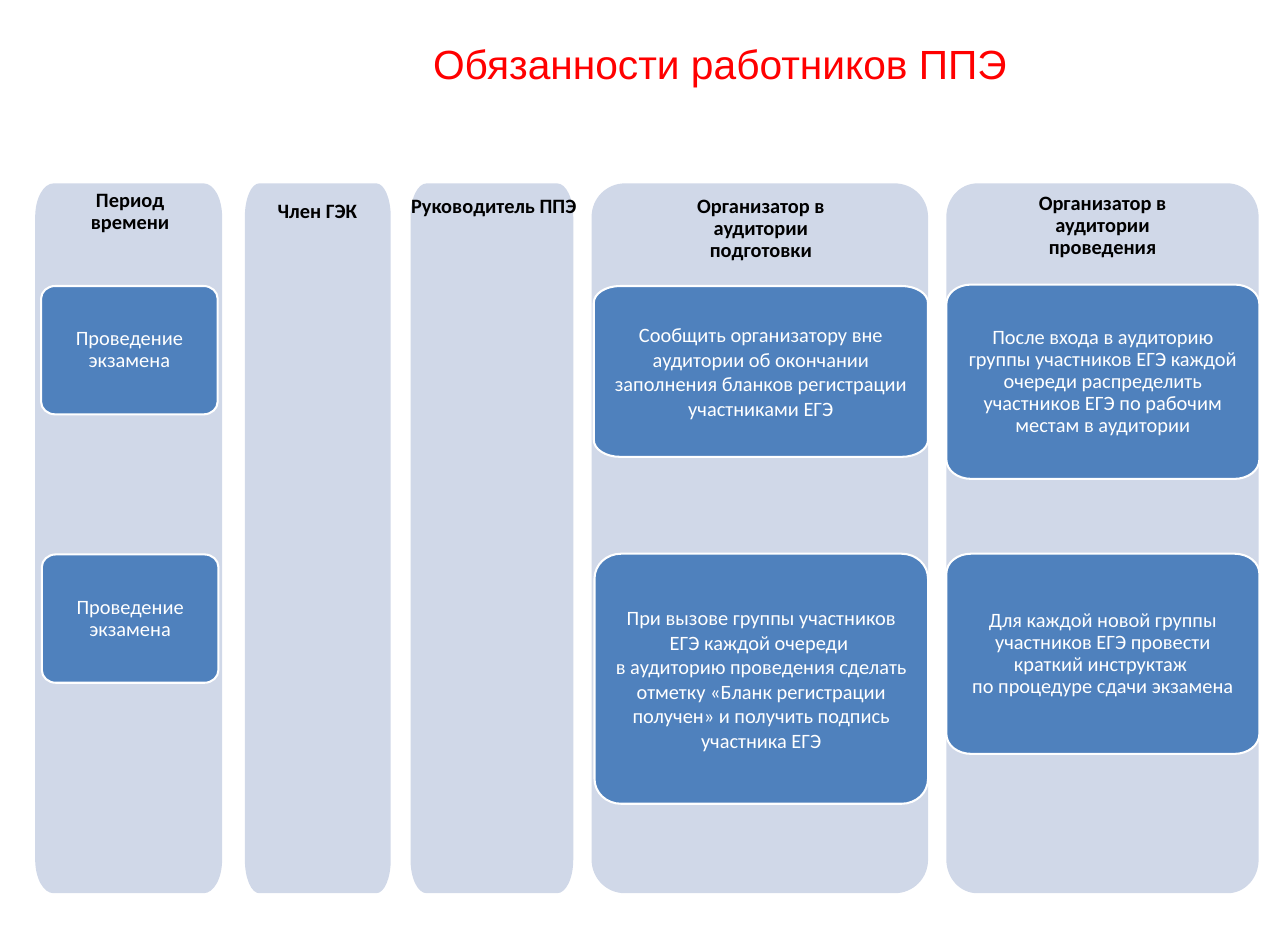
"""Build the slide on the duties of exam station staff."""
from dataclasses import dataclass

from lxml.etree import SubElement
from pptx import Presentation
from pptx.dml.color import RGBColor
from pptx.enum.text import MSO_ANCHOR, MSO_AUTO_SIZE, PP_ALIGN
from pptx.oxml.ns import qn
from pptx.util import Inches, Pt


@dataclass(frozen=True)
class Theme:
    column: str = "D0D8E8"
    card: str = "4F81BD"
    light: str = "FFFFFF"
    dark: str = "000000"
    accent: str = "FF0000"
    heading_font: str = "Arial"
    body_font: str = "Calibri"
    heading_size: int = 40
    body_size: int = 20
    outline: float = 2


def write(frame, text, *, font, size, color, bold=False, spacing=None,
          anchor=MSO_ANCHOR.TOP, margins=(0.17, 0.09), wrap=True):
    frame.word_wrap = wrap
    frame.vertical_anchor = anchor
    frame.margin_left = frame.margin_right = Inches(margins[0])
    frame.margin_top = frame.margin_bottom = Inches(margins[1])
    paragraph = frame.paragraphs[0]
    paragraph.text = text
    paragraph.alignment = PP_ALIGN.CENTER
    paragraph.line_spacing = spacing
    for run in paragraph.runs:
        run.font.name = font
        run.font.size = Pt(size)
        run.font.bold = bold
        run.font.color.rgb = RGBColor.from_string(color)


def round_corners(panel, width, height, bend=0.56):
    """Turn each cut corner of an eight-point outline into one curve."""
    lines = list(panel.element.iter(qn("a:lnTo")))
    starts = [next(panel.element.iter(qn("a:moveTo"))), *lines]
    corners = [(0, 0), (width, 0), (width, height), (0, height)]
    for corner, start, line in zip(corners, starts[::2], lines[::2]):
        line.tag = qn("a:cubicBezTo")
        end = line[0]
        for position, point in enumerate((start[-1], end)):
            handle = SubElement(line, qn("a:pt"))
            for axis, target in zip("xy", corner):
                value = int(point.get(axis))
                handle.set(axis, str(round(value + bend * (target - value))))
            line.insert(position, handle)


class SlideBuilder:
    def __init__(self, slide, theme):
        self.slide = slide
        self.theme = theme

    def panel(self, box, fill, rx, ry):
        left, top, width, height = box
        right, bottom = left + width, top + height
        outline = [(left, top + ry), (left + rx, top), (right - rx, top), (right, top + ry),
                   (right, bottom - ry), (right - rx, bottom), (left + rx, bottom),
                   (left, bottom - ry)]
        start, *rest = [(Inches(x), Inches(y)) for x, y in outline]
        builder = self.slide.shapes.build_freeform(*start)
        builder.add_line_segments(rest, close=True)
        panel = builder.convert_to_shape()
        round_corners(panel, panel.width, panel.height)
        panel.shadow.inherit = False
        panel.fill.solid()
        panel.fill.fore_color.rgb = RGBColor.from_string(fill)
        panel.line.fill.background()
        return panel

    def column(self, left, width):
        self.panel((left, 2.5, width, 9.68), self.theme.column, width * 0.1, 0.46)

    def card(self, box, text, spacing):
        theme = self.theme
        card = self.panel(box, theme.card, box[2] * 0.08, box[3] * 0.1)
        card.line.color.rgb = RGBColor.from_string(theme.light)
        card.line.width = Pt(theme.outline)
        write(card.text_frame, text, font=theme.body_font, size=theme.body_size,
              color=theme.light, spacing=spacing, anchor=MSO_ANCHOR.MIDDLE,
              margins=(0.24, 0.2))

    def label(self, box, text, **text_format):
        frame = self.slide.shapes.add_textbox(*map(Inches, box)).text_frame
        write(frame, text, **text_format)
        frame.auto_size = MSO_AUTO_SIZE.SHAPE_TO_FIT_TEXT

    def header(self, box, text, wrap):
        self.label(box, text, font=self.theme.body_font, size=self.theme.body_size,
                   color=self.theme.dark, bold=True, spacing=0.9, wrap=wrap)

    def title(self, box, text):
        self.label(box, text, font=self.theme.heading_font, size=self.theme.heading_size,
                   color=self.theme.accent, anchor=MSO_ANCHOR.MIDDLE)


COLUMNS = [(0.48, 2.55), (3.34, 1.99), (5.6, 2.22), (8.07, 4.59), (12.91, 4.26)]
HEADERS = [
    ((0.67, 2.5, 2.21, 0.78), "Период времени", True),
    ((3.5, 2.65, 1.66, 0.48), "Член ГЭК", False),
    ((5.36, 2.58, 2.75, 0.78), "Руководитель ППЭ", True),
    ((8.91, 2.58, 2.94, 1.08), "Организатор в аудитории подготовки", True),
    ((13.62, 2.54, 2.84, 1.08), "Организатор в аудитории проведения", True),
]
PERIOD = "Проведение экзамена"
CARDS = [
    ((0.56, 3.9, 2.41, 1.75), PERIOD, 0.9),
    ((0.57, 7.56, 2.41, 1.75), PERIOD, 0.9),
    ((8.1, 3.9, 4.56, 2.33),
     "Сообщить организатору вне аудитории об окончании заполнения бланков "
     "регистрации участниками ЕГЭ", None),
    ((8.11, 7.55, 4.55, 3.41),
     "При вызове группы участников ЕГЭ каждой очереди \nв аудиторию проведения "
     "сделать отметку «Бланк регистрации получен» и получить подпись участника ЕГЭ", None),
    ((12.91, 3.88, 4.27, 2.65),
     "После входа в аудиторию группы участников ЕГЭ каждой очереди распределить "
     "участников ЕГЭ по рабочим местам в аудитории", 0.9),
    ((12.91, 7.55, 4.27, 2.73),
     "Для каждой новой группы участников ЕГЭ провести краткий инструктаж \n"
     "по процедуре сдачи экзамена", 0.9),
]


def main():
    deck = Presentation()
    deck.slide_width = Inches(17.57)
    deck.slide_height = Inches(12.79)
    duties = SlideBuilder(deck.slides.add_slide(deck.slide_layouts[6]), Theme())
    for column in COLUMNS:
        duties.column(*column)
    for header in HEADERS:
        duties.header(*header)
    for card in CARDS:
        duties.card(*card)
    duties.title((3.84, 0.44, 11.96, 0.85), "Обязанности работников ППЭ")
    deck.save("out.pptx")


if __name__ == "__main__":
    main()
